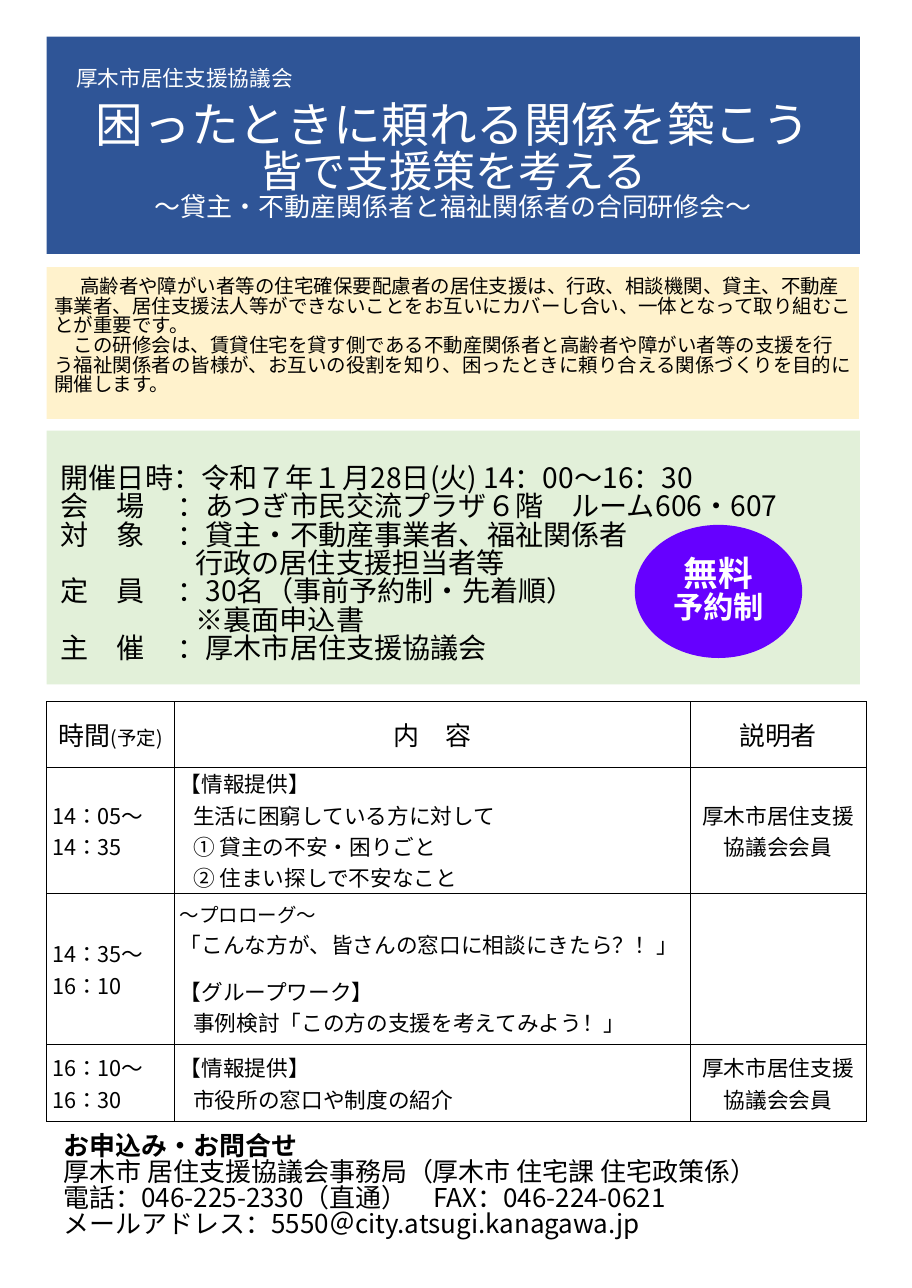
from collections import namedtuple
from lxml.etree import SubElement as Sub
from pptx import Presentation
from pptx.dml.color import RGBColor as RGB
from pptx.enum.shapes import MSO_SHAPE as Kind
from pptx.enum.text import MSO_ANCHOR as Anchor, PP_ALIGN as Align
from pptx.oxml.ns import qn
from pptx.util import Pt

WHITE = RGB(255, 255, 255)
BLACK = RGB(0, 0, 0)
BLUE = RGB(0x2F, 0x55, 0x97)
GREEN = RGB(0xE2, 0xF0, 0xD9)
CREAM = RGB(0xFF, 0xF2, 0xCC)
PURPLE = RGB(0x66, 0, 0xFF)
FONT = "Noto Sans CJK JP"
PX = 9144

Line = namedtuple("Line", "runs mid indent before tab bold")


def line(text, size, mid=False, indent=0, before=0, tab=0, bold=False):
    return Line([(text, size)], mid, indent, before, tab, bold)


def lines(size, *texts, **style):
    return [line(text, size, **style) for text in texts]


class Flyer:
    """Draws the flyer's elements on one slide in a shared style."""

    def __init__(self, wide, high):
        self.deck = Presentation()
        self.deck.slide_width, self.deck.slide_height = wide * PX, high * PX
        self.slide = self.deck.slides.add_slide(self.deck.slide_layouts[6])

    def text(self, frame, items, color, pitch=None):
        for num, item in enumerate(items):
            para = frame.add_paragraph() if num else frame.paragraphs[0]
            props = para._p.get_or_add_pPr()
            props.set("marL", "0")
            props.set("indent", str(item.indent * PX))
            if item.tab:
                tabs = Sub(props, qn("a:tabLst"))
                Sub(tabs, qn("a:tab"), pos=str(item.tab * PX), algn="l")
            para.alignment = Align.CENTER if item.mid else Align.LEFT
            if pitch:
                para.line_spacing = pitch
            if item.before:
                para.space_before = Pt(item.before)
            for words, size in item.runs:
                run = para.add_run()
                run.text = words
                run.font.size = Pt(size)
                run.font.bold = item.bold
                run.font.name = FONT
                run.font.color.rgb = color
                Sub(run._r.get_or_add_rPr(), qn("a:ea"), typeface=FONT)

    def panel(self, box, fill, items, color=BLACK, kind=Kind.RECTANGLE,
              anchor=Anchor.MIDDLE, inset=(10, 5, 10, 5)):
        shape = self.slide.shapes.add_shape(kind, *(n * PX for n in box))
        shape.shadow.inherit = False
        shape.fill.solid()
        shape.fill.fore_color.rgb = fill
        shape.line.fill.background()
        frame = shape.text_frame
        frame.word_wrap = True
        frame.vertical_anchor = anchor
        (frame.margin_left, frame.margin_top, frame.margin_right,
         frame.margin_bottom) = (n * PX for n in inset)
        self.text(frame, items, color, 0.84)

    def border(self, cell):
        props = cell._tc.get_or_add_tcPr()
        for num, side in enumerate(("lnL", "lnR", "lnT", "lnB")):
            edge = props.makeelement(qn("a:" + side), {"w": str(Pt(1))})
            fill = Sub(edge, qn("a:solidFill"))
            Sub(fill, qn("a:srgbClr"), val=str(BLACK))
            props.insert(num, edge)

    def table(self, left, top, cols, rows, cells):
        table = self.slide.shapes.add_table(
            len(rows), len(cols), left * PX, top * PX,
            sum(cols) * PX, sum(rows) * PX).table
        table.first_row = table.horz_banding = False
        for col, wide in zip(table.columns, cols):
            col.width = wide * PX
        for row, high, group in zip(table.rows, rows, cells):
            row.height = high * PX
            for cell, items in zip(row.cells, group):
                cell.fill.background()
                cell.vertical_anchor = Anchor.MIDDLE
                cell.margin_left = cell.margin_right = 7 * PX
                cell.margin_top = cell.margin_bottom = 0
                self.border(cell)
                self.text(cell.text_frame, items, BLACK)


def main():
    flyer = Flyer(1171, 1654)
    flyer.panel((60, 47, 1044, 279), BLUE, [
        line("厚木市居住支援協議会", 20, indent=28),
        line("困ったときに頼れる関係を築こう", 44, mid=True, before=12.7),
        line("皆で支援策を考える", 40, mid=True),
        line("～貸主・不動産関係者と福祉関係者の合同研修会～", 24, mid=True),
    ], WHITE)
    flyer.panel((60, 553, 1044, 326), GREEN, [
        line("開催日時：令和７年１月28日(火) 14：00～16：30", 26),
        line("会　場\t：あつぎ市民交流プラザ６階　ルーム606・607", 26, tab=124),
        line("対　象\t：貸主・不動産事業者、福祉関係者", 26, tab=124),
        line("行政の居住支援担当者等", 26, indent=173),
        line("定　員\t：30名（事前予約制・先着順）", 26, tab=124),
        line("※裏面申込書", 26, indent=173),
        line("主　催\t：厚木市居住支援協議会", 26, tab=124),
    ], inset=(18, 19, 10, 0))
    flyer.panel((815, 674, 215, 171), PURPLE, [
        line("無料", 32, mid=True, bold=True),
        line("予約制", 28, mid=True, bold=True),
    ], WHITE, Kind.OVAL)
    flyer.panel((72, 1452, 1044, 178), WHITE, [
        line("お申込み・お問合せ", 24, bold=True),
        *lines(24, "厚木市 居住支援協議会事務局（厚木市 住宅課 住宅政策係）",
               "電話：046-225-2330（直通）　FAX：046-224-0621",
               "メールアドレス：5550＠city.atsugi.kanagawa.jp"),
    ], anchor=Anchor.TOP)
    flyer.panel((60, 343, 1043, 195), CREAM, [
        line("高齢者や障がい者等の住宅確保要配慮者の居住支援は、行政、相談機関、"
             "貸主、不動産事業者、居住支援法人等ができないことをお互いにカバーし合い、"
             "一体となって取り組むことが重要です。", 18, indent=33),
        line("この研修会は、賃貸住宅を貸す側である不動産関係者と高齢者や障がい者等の"
             "支援を行う福祉関係者の皆様が、お互いの役割を知り、困ったときに頼り合える"
             "関係づくりを目的に開催します。", 18, indent=25),
    ], anchor=Anchor.TOP, inset=(10, 14, 10, 5))

    hours = line("時間", 24, mid=True)
    hours.runs.append(("(予定)", 18))
    info = line("【情報提供】", 20)
    host = lines(20, "厚木市居住支援", "協議会会員", mid=True)
    flyer.table(60, 901, (164, 662, 226), (65, 160, 195, 98), [
        [[hours], lines(24, "内　容", mid=True), lines(24, "説明者", mid=True)],
        [lines(20, "14：05～", "14：35"),
         [info, *lines(20, "生活に困窮している方に対して", "① 貸主の不安・困りごと",
                       "② 住まい探しで不安なこと", indent=17)], host],
        [lines(20, "14：35～", "16：10"),
         [line("～プロローグ～", 18),
          line("「こんな方が、皆さんの窓口に相談にきたら？！」", 20),
          line("【グループワーク】", 20, before=14.5),
          line("事例検討「この方の支援を考えてみよう！」", 20, indent=17)], []],
        [lines(20, "16：10～", "16：30"),
         [info, line("市役所の窓口や制度の紹介", 20, indent=17)], host],
    ])
    flyer.deck.save("out.pptx")


if __name__ == "__main__":
    main()
